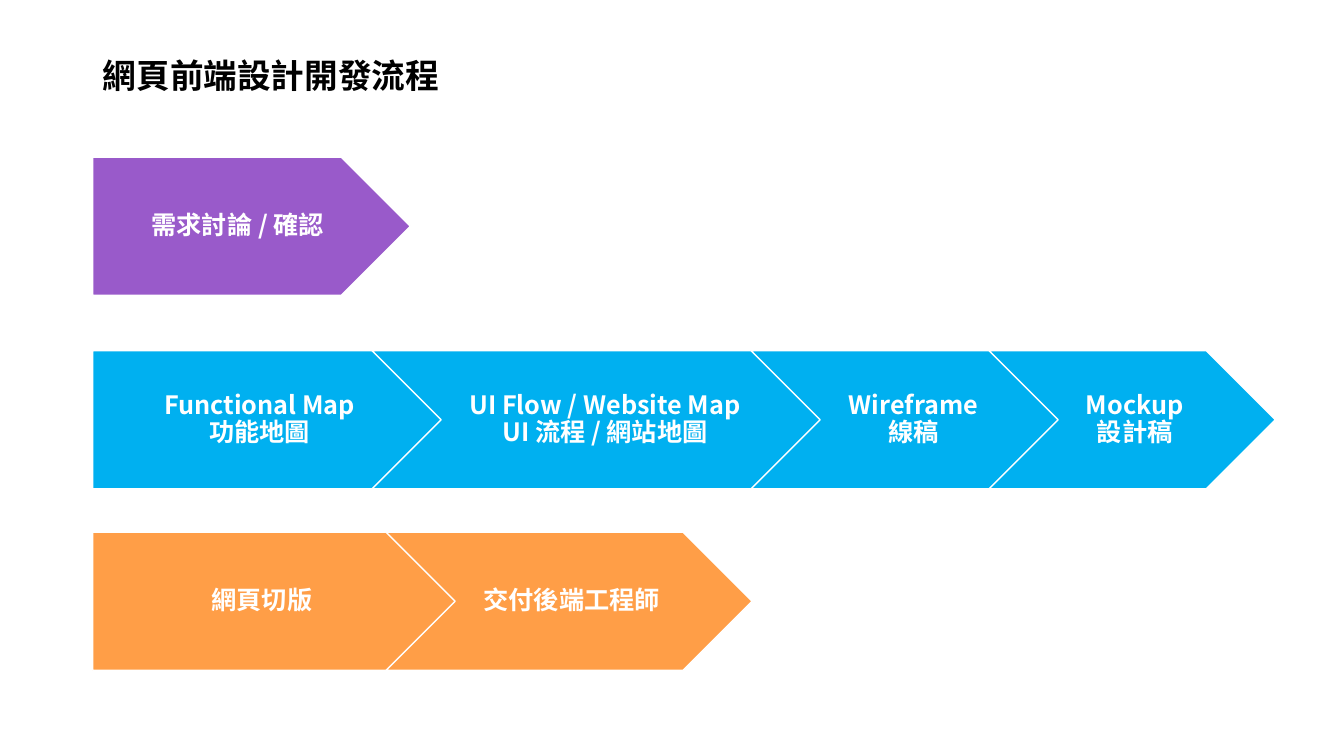
from dataclasses import dataclass

from lxml import etree
from pptx import Presentation
from pptx.dml.color import RGBColor
from pptx.enum.shapes import MSO_SHAPE
from pptx.enum.text import MSO_ANCHOR, PP_ALIGN
from pptx.oxml.ns import qn
from pptx.util import Inches, Pt

PENTAGON = MSO_SHAPE.PENTAGON
CHEVRON = MSO_SHAPE.CHEVRON
MIDDLE = MSO_ANCHOR.MIDDLE
LEFT = PP_ALIGN.LEFT
CENTER = PP_ALIGN.CENTER

TITLE = "網頁前端設計開發流程"
PHASES = [
    {"top": 1.56, "color": "995ACA", "overlap": 0,
     "steps": [("需求討論 / 確認", 3.15)]},
    {"top": 3.48, "color": "00B0F0", "overlap": 0.81,
     "steps": [("Functional Map\n功能地圖", 3.58),
               ("UI Flow / Website Map\nUI 流程 / 網站地圖", 4.57),
               ("Wireframe\n線稿", 3.17),
               ("Mockup\n設計稿", 2.84)]},
    {"top": 5.28, "color": "FF9E47", "overlap": 0.72,
     "steps": [("網頁切版", 3.63), ("交付後端工程師", 3.63)]},
]
MARGIN_LEFT = 0.92
STEP_HEIGHT = 1.37


@dataclass(frozen=True)
class Theme:
    font: str = "Noto Sans CJK TC"
    ink: str = "000000"
    white: str = "FFFFFF"
    title_size: int = 24
    step_size: int = 18
    outline: int = 1


THEME = Theme()


def write_text(frame, text, *, size, color, align):
    frame.word_wrap = True
    frame.vertical_anchor = MIDDLE
    para = frame.paragraphs[0]
    para.text = text
    para.alignment = align
    para.line_spacing = 0.9
    para.space_before = Pt(0)
    for span in para.runs:
        span.font.name = THEME.font
        span.font.size = Pt(size)
        span.font.bold = True
        span.font.color.rgb = RGBColor.from_string(color)
        east_asian = etree.SubElement(span.font._element, qn("a:ea"))
        east_asian.set("typeface", THEME.font)


def add_step(page, preset, text, left, top, width, color):
    box = page.shapes.add_shape(preset, Inches(left), Inches(top),
                                Inches(width), Inches(STEP_HEIGHT))
    box.shadow.inherit = False
    box.fill.solid()
    box.fill.fore_color.rgb = RGBColor.from_string(color)
    box.line.color.rgb = RGBColor.from_string(THEME.white)
    box.line.width = Pt(THEME.outline)
    frame = box.text_frame
    frame.margin_left = Inches(0.1 if preset == PENTAGON else 0.08)
    frame.margin_right = Inches(0.03)
    write_text(frame, text, size=THEME.step_size, color=THEME.white, align=CENTER)
    frame.paragraphs[0].space_after = Pt(THEME.step_size * 0.35)


def add_phase(page, phase):
    left = MARGIN_LEFT
    for index, (text, width) in enumerate(phase["steps"]):
        preset = CHEVRON if index else PENTAGON
        add_step(page, preset, text, left, phase["top"], width, phase["color"])
        left += width - phase["overlap"]


def main():
    deck = Presentation()
    deck.slide_width, deck.slide_height = Inches(13.33), Inches(7.5)
    page = deck.slides.add_slide(deck.slide_layouts[5])
    title = page.shapes.title
    title.left, title.top = Inches(MARGIN_LEFT), Inches(0.4)
    title.width, title.height = Inches(11.5), Inches(0.74)
    write_text(title.text_frame, TITLE, size=THEME.title_size, color=THEME.ink, align=LEFT)
    for phase in PHASES:
        add_phase(page, phase)
    deck.save("out.pptx")


if __name__ == "__main__":
    main()
